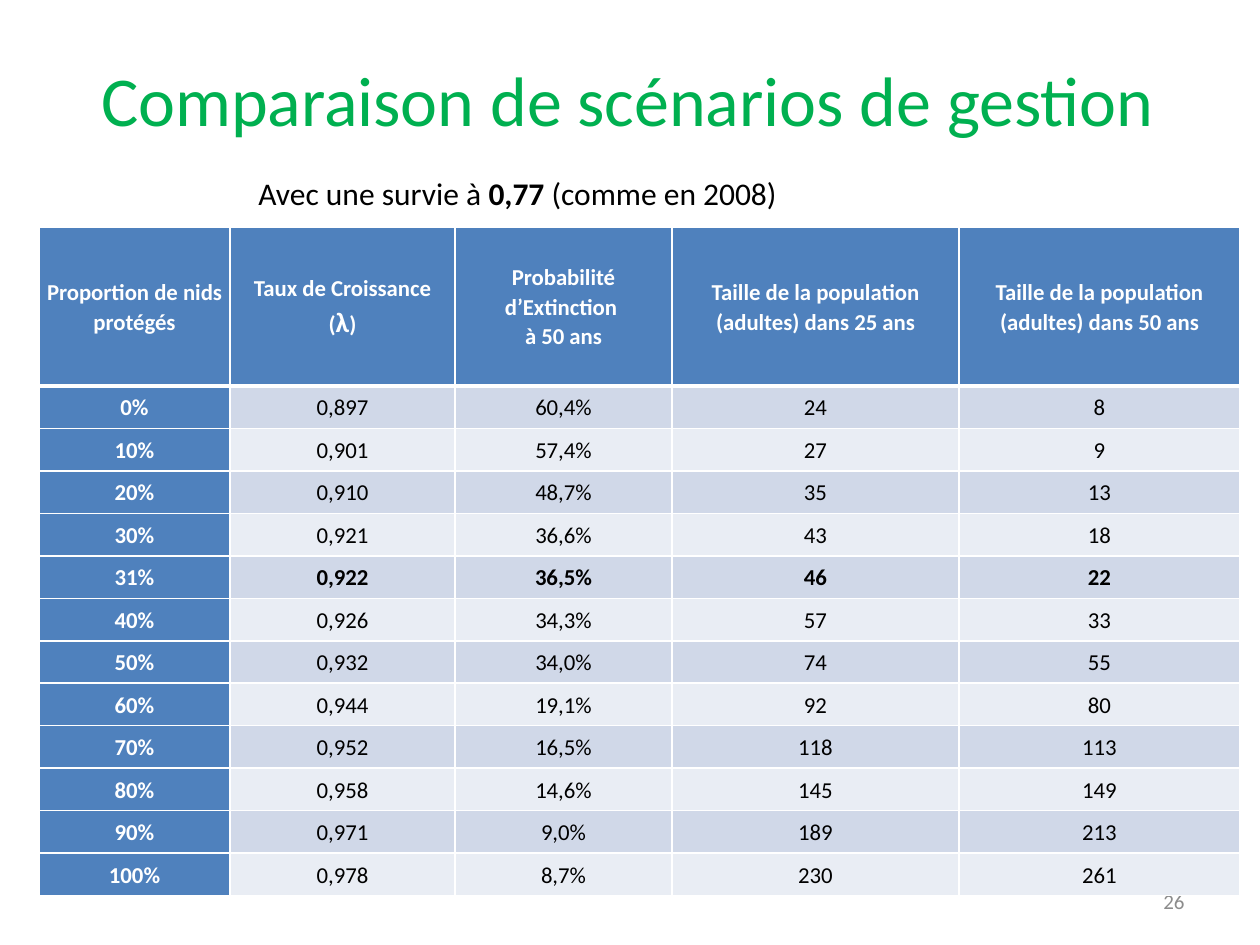
from lxml import etree
from pptx import Presentation
from pptx.dml.color import RGBColor
from pptx.enum.text import MSO_ANCHOR as ANCHOR, PP_ALIGN as ALIGN
from pptx.oxml.ns import qn
from pptx.util import Emu, Inches, Pt

PX = Inches(1) // 126
COLORS = {
    "title": "00B050", "text": "000000", "number": "8C8C8C", "white": "FFFFFF",
    "header": "4F81BD", "odd": "D0D8E8", "even": "E9EDF4",
}

prs = Presentation()
prs.slide_width, prs.slide_height = Inches(10), Inches(7.5)
slide = prs.slides.add_slide(prs.slide_layouts[6])


def style(run, size, color, bold=False):
    run.font.name = "Calibri"
    run.font.size = Pt(size)
    run.font.bold = bold
    run.font.color.rgb = RGBColor.from_string(COLORS[color])


def border(cell, side, width):
    """Draw a white line on one side (L, R, T or B) of a cell."""
    line = etree.SubElement(cell._tc.get_or_add_tcPr(), qn(f"a:ln{side}"), w=str(Pt(width)))
    fill = etree.SubElement(line, qn("a:solidFill"))
    etree.SubElement(fill, qn("a:srgbClr"), val=COLORS["white"])


# Title, subtitle and slide number
captions = [
    ((29, 20, 1197, 158), ["Comparaison de scénarios de gestion"],
     40, "title", ALIGN.CENTER, ANCHOR.MIDDLE),
    ((246, 168, 622, 50), ["Avec une survie à ", "0,77", " (comme en 2008)"],
     18, "text", ALIGN.LEFT, ANCHOR.TOP),
    ((903, 876, 294, 50), ["26"], 12, "number", ALIGN.RIGHT, ANCHOR.MIDDLE),
]
for place, pieces, size, color, align, anchor in captions:
    frame = slide.shapes.add_textbox(*(Emu(v * PX) for v in place)).text_frame
    frame.word_wrap = True
    frame.vertical_anchor = anchor
    paragraph = frame.paragraphs[0]
    paragraph.alignment = align
    for piece in pieces:
        run = paragraph.add_run()
        run.text = piece
        style(run, size, color, bold=piece == "0,77")

# Scenario table
scenarios = [
    ("Proportion de nids protégés", "Taux de Croissance\v(λ)",
     "Probabilité d’Extinction \và 50 ans",
     "Taille de la population (adultes) dans 25 ans",
     "Taille de la population (adultes) dans 50 ans"),
    ("0%", "0,897", "60,4%", "24", "8"),
    ("10%", "0,901", "57,4%", "27", "9"),
    ("20%", "0,910", "48,7%", "35", "13"),
    ("30%", "0,921", "36,6%", "43", "18"),
    ("31%", "0,922", "36,5%", "46", "22"),
    ("40%", "0,926", "34,3%", "57", "33"),
    ("50%", "0,932", "34,0%", "74", "55"),
    ("60%", "0,944", "19,1%", "92", "80"),
    ("70%", "0,952", "16,5%", "118", "113"),
    ("80%", "0,958", "14,6%", "145", "149"),
    ("90%", "0,971", "9,0%", "189", "213"),
    ("100%", "0,978", "8,7%", "230", "261"),
]
CURRENT = "31%"
COLUMN_WIDTHS = [191, 225, 217, 287, 281]
TABLE_HEIGHT, HEADER_HEIGHT = 669, 159

table = slide.shapes.add_table(
    len(scenarios), len(COLUMN_WIDTHS), Emu(39 * PX), Emu(227 * PX),
    Emu(sum(COLUMN_WIDTHS) * PX), Emu(TABLE_HEIGHT * PX)).table
for column, width in zip(table.columns, COLUMN_WIDTHS):
    column.width = Emu(width * PX)
body_height = (TABLE_HEIGHT - HEADER_HEIGHT) * PX // (len(scenarios) - 1)

for r, scenario in enumerate(scenarios):
    table.rows[r].height = Emu(body_height if r else HEADER_HEIGHT * PX)
    for c, value in enumerate(scenario):
        cell = table.cell(r, c)
        heading = r == 0 or c == 0
        cell.vertical_anchor = ANCHOR.MIDDLE
        cell.margin_left = cell.margin_right = Emu(5 * PX)
        cell.margin_top = cell.margin_bottom = 0

        paragraph = cell.text_frame.paragraphs[0]
        before, symbol, after = value.partition("λ")
        paragraph.text = before
        if symbol:
            paragraph.add_run().text = symbol
            paragraph.add_run().text = after
        paragraph.alignment = ALIGN.CENTER
        paragraph.line_spacing = 1.07
        for run in paragraph.runs:
            style(run, 16 if run.text == "λ" else 13, "white" if heading else "text",
                  bold=heading or scenario[0] == CURRENT)
        for line_break in paragraph._p.findall(qn("a:br")):
            etree.SubElement(line_break, qn("a:rPr"), sz="1300")

        # Borders come before the fill in the cell properties
        for side in "LRTB":
            under_header = (r, side) in ((0, "B"), (1, "T"))
            border(cell, side, 3 if under_header else 1)
        cell.fill.solid()
        band = "header" if heading else "odd" if r % 2 else "even"
        cell.fill.fore_color.rgb = RGBColor.from_string(COLORS[band])

prs.save("out.pptx")
